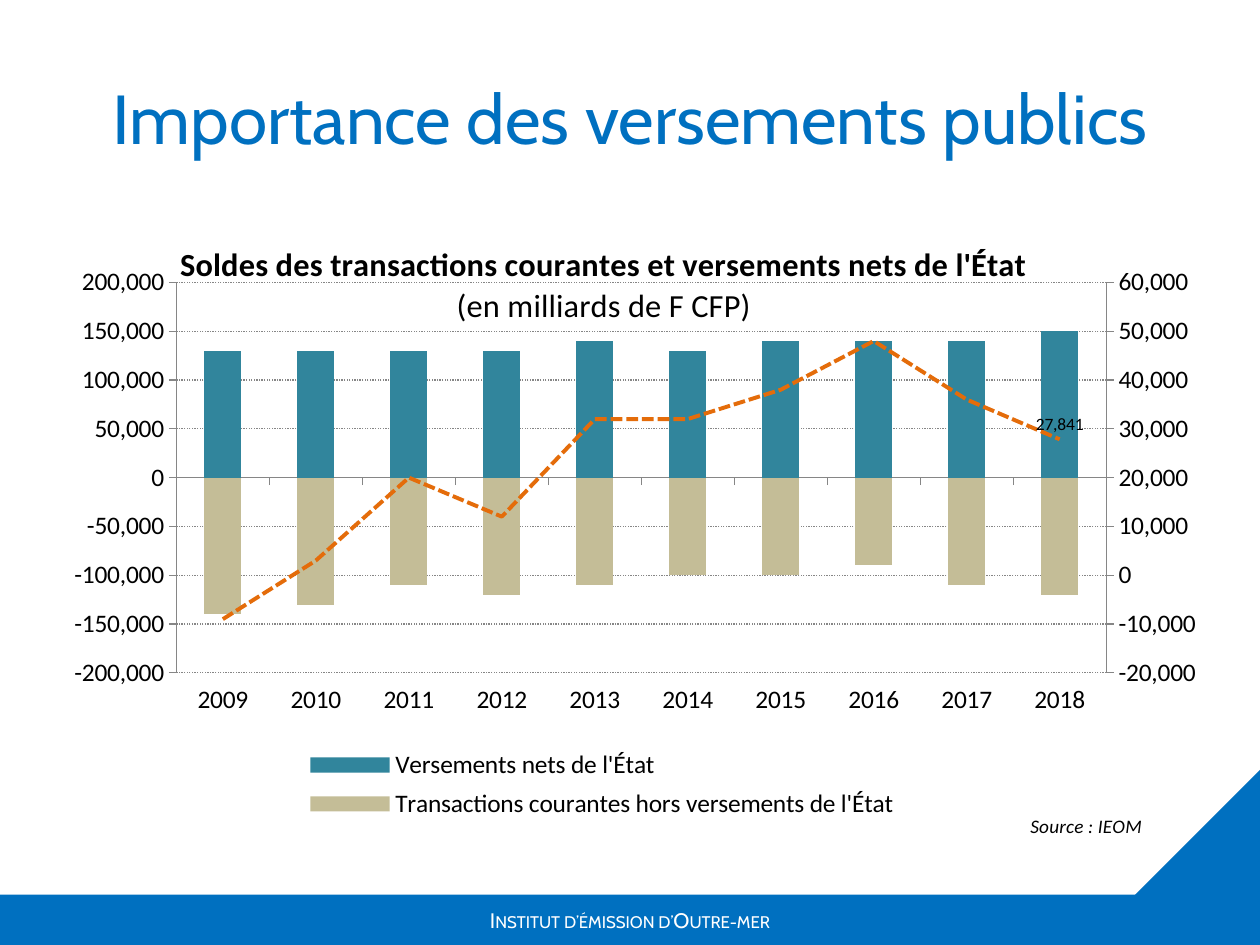
from copy import deepcopy
from dataclasses import dataclass

from pptx import Presentation
from pptx.chart.axis import CategoryAxis, ValueAxis
from pptx.chart.data import CategoryChartData
from pptx.dml.color import RGBColor
from pptx.enum.chart import (XL_CHART_TYPE as ChartType, XL_LABEL_POSITION as LabelPos,
                             XL_LEGEND_POSITION as LegendPos, XL_MARKER_STYLE as Marker,
                             XL_TICK_LABEL_POSITION as TickLabels, XL_TICK_MARK as Tick)
from pptx.enum.dml import MSO_LINE as Dash
from pptx.enum.shapes import MSO_SHAPE as Shape
from pptx.enum.text import MSO_ANCHOR as Anchor, PP_ALIGN as Align
from pptx.oxml import parse_xml
from pptx.oxml.ns import nsdecls, qn
from pptx.util import Pt

COLORS = {"blue": "0070C0", "teal": "31859C", "sand": "C4BD97", "orange": "E46C0A",
          "grid": "868686", "black": "000000", "white": "FFFFFF"}


@dataclass
class Box:
    x: float
    y: float
    w: float
    h: float

    def pts(self) -> tuple:
        return Pt(self.x), Pt(self.y), Pt(self.w), Pt(self.h)


@dataclass
class Series:
    name: str
    color: str
    values: list


YEARS = [str(year) for year in range(2009, 2019)]
SERIES = [
    Series("Versements nets de l'État", "teal",
           [130000, 130000, 130000, 130000, 140000, 130000, 140000, 140000, 140000, 150000]),
    Series("Transactions courantes hors versements de l'État", "sand",
           [-140000, -130000, -110000, -120000, -110000, -100000, -100000, -90000, -110000, -120000]),
    Series("Transactions courantes (axe de droite)", "orange",
           [-9000, 3000, 20000, 12000, 32000, 32000, 38000, 48000, 36000, 27841]),
]


def rgb(name: str) -> RGBColor:
    return RGBColor.from_string(COLORS[name])


def style(font, size: float, color: str, name: str, bold=False, italic=False) -> None:
    font.size, font.name, font.bold, font.italic = Pt(size), name, bold, italic
    font.color.rgb = rgb(color)


def add_shape(slide, kind, box: Box, rotation: float = 0):
    sp = slide.shapes.add_shape(kind, *box.pts())
    sp.shadow.inherit = False
    sp.fill.solid()
    sp.fill.fore_color.rgb = rgb("blue")
    sp.line.fill.background()
    sp.rotation = rotation
    return sp


def set_text(sp, text: str, size: float, color: str):
    tf = sp.text_frame
    tf.text, tf.word_wrap, tf.vertical_anchor = text, True, Anchor.MIDDLE
    p = tf.paragraphs[0]
    p.alignment = Align.CENTER
    r = p.runs[0]
    style(r.font, size, color, "Cabin")
    return r


def place(parent, anchor, **fractions: float) -> None:
    """Give a chart part a manual layout, put just before the anchor element."""
    for old in parent.findall(qn("c:layout")):
        parent.remove(old)
    inner = '<c:layoutTarget val="inner"/>' if parent.tag == qn("c:plotArea") else ""
    modes = "".join(f'<c:{k}Mode val="edge"/>' for k in "xy")
    sizes = "".join(f'<c:{k} val="{v}"/>' for k, v in fractions.items())
    anchor.addprevious(parse_xml(
        f'<c:layout {nsdecls("c")}><c:manualLayout>{inner}{modes}{sizes}'
        '</c:manualLayout></c:layout>'))


def scale_axis(axis, low: float, high: float, step: float) -> None:
    axis.minimum_scale, axis.maximum_scale, axis.major_unit = low, high, step


def style_axis(axis) -> None:
    axis.major_tick_mark, axis.minor_tick_mark = Tick.OUTSIDE, Tick.NONE
    axis.format.line.color.rgb = rgb("grid")
    axis.format.line.width = Pt(0.75)


def add_right_line(chart):
    """Move the last series to a line plot with its own right-hand axis."""
    bar = chart.plots[0]._element
    ser = bar.findall(qn("c:ser"))[-1]
    for extra in ser.findall(qn("c:invertIfNegative")):
        ser.remove(extra)
    line = parse_xml(f'<c:lineChart {nsdecls("c")}><c:grouping val="standard"/>'
                     '<c:varyColors val="0"/><c:marker val="1"/>'
                     '<c:axId val="5001"/><c:axId val="5002"/></c:lineChart>')
    line.insert(2, ser)
    bar.addnext(line)

    cat, val = chart.category_axis._element, chart.value_axis._element
    right_cat, right_val = deepcopy(cat), deepcopy(val)
    for el, own, cross in ((right_cat, "5001", "5002"), (right_val, "5002", "5001")):
        el.find(qn("c:axId")).set("val", own)
        el.find(qn("c:crossAx")).set("val", cross)
    right_val.find(qn("c:axPos")).set("val", "r")
    right_val.find(qn("c:crosses")).set("val", "max")
    val.addnext(right_val)
    right_val.addnext(right_cat)
    CategoryAxis(right_cat).visible = False
    axis = ValueAxis(right_val)
    axis.has_major_gridlines = False
    scale_axis(axis, -20000, 60000, 10000)
    return chart.plots[1].series[0]


def add_balance_chart(slide) -> None:
    data = CategoryChartData(number_format="#,##0")
    data.categories = YEARS
    for s in SERIES:
        data.add_series(s.name, s.values)
    chart = slide.shapes.add_chart(ChartType.COLUMN_STACKED, *Box(36, 126, 648, 356.4).pts(),
                                   data).chart
    style(chart.font, 14.5, "black", "Calibri")

    # Columns
    plot = chart.plots[0]
    plot.gap_width, plot.overlap, plot.vary_by_categories = 150, 100, False
    for ser, s in zip(plot.series, SERIES[:2]):
        ser.format.fill.solid()
        ser.format.fill.fore_color.rgb = rgb(s.color)
        ser.invert_if_negative = False

    # Axes
    cat, val = chart.category_axis, chart.value_axis
    for axis in (cat, val):
        style_axis(axis)
    cat.tick_label_position = TickLabels.LOW
    val.tick_labels.number_format = "#,##0"
    val.tick_labels.number_format_is_linked = False
    scale_axis(val, -200000, 200000, 50000)
    grid = val.major_gridlines.format.line
    grid.color.rgb, grid.width, grid.dash_style = rgb("grid"), Pt(0.75), Dash.ROUND_DOT

    # Line on the right axis, with its last value
    ser = add_right_line(chart)
    ser.smooth = False
    ser.marker.style = Marker.NONE
    ln = ser.format.line
    ln.color.rgb, ln.width, ln.dash_style = rgb(SERIES[2].color), Pt(2.25), Dash.SQUARE_DOT
    label = ser.points[len(YEARS) - 1].data_label
    style(label.font, 10, "black", "Calibri")
    label.position = LabelPos.ABOVE

    # Title and source
    tf = chart.chart_title.text_frame
    tf.text = "Soldes des transactions courantes et versements nets de l'État"
    tf.add_paragraph().text = "(en milliards de F CFP)"
    for p, bold in zip(tf.paragraphs, (True, False)):
        style(p.runs[0].font, 18.5, "black", "Calibri", bold=bold)
    source = cat.axis_title.text_frame
    source.text = "Source : IEOM"
    style(source.paragraphs[0].runs[0].font, 11, "black", "Calibri", italic=True)

    # Legend without the line entry
    chart.has_legend = True
    chart.legend.position = LegendPos.BOTTOM
    chart.legend.include_in_layout = False
    legend = chart.legend._element
    overlay = legend.find(qn("c:overlay"))
    overlay.addprevious(parse_xml(f'<c:legendEntry {nsdecls("c")}><c:idx val="2"/>'
                                  '<c:delete val="1"/></c:legendEntry>'))

    # Positions as fractions of the chart
    place(legend, overlay, x=0.2, y=0.84, w=0.55, h=0.14)
    for title, x, y in ((chart.chart_title, 0.1, 0.03), (cat.axis_title, 0.85, 0.95)):
        el = title._element
        place(el, el.find(qn("c:overlay")), x=x, y=y)
    area = plot._element.getparent()
    place(area, plot._element, x=0.1, y=0.1, w=0.82, h=0.63)


def main() -> None:
    prs = Presentation()
    prs.slide_width, prs.slide_height = Pt(720), Pt(540)
    slide = prs.slides.add_slide(prs.slide_layouts[6])

    # Footer band and corner
    band = add_shape(slide, Shape.RECTANGLE, Box(0, 511.2, 720, 28.8))
    r = set_text(band, "Institut d’émission d’Outre-mer", 12, "white")
    r.font._element.set("cap", "small")
    add_shape(slide, Shape.RIGHT_TRIANGLE, Box(648, 440, 72, 72), 270)

    # Slide title
    title = slide.shapes.add_textbox(*Box(36, 21.6, 648, 90).pts())
    set_text(title, "Importance des versements publics", 39.6, "blue")

    add_balance_chart(slide)
    prs.save("out.pptx")


if __name__ == "__main__":
    main()
